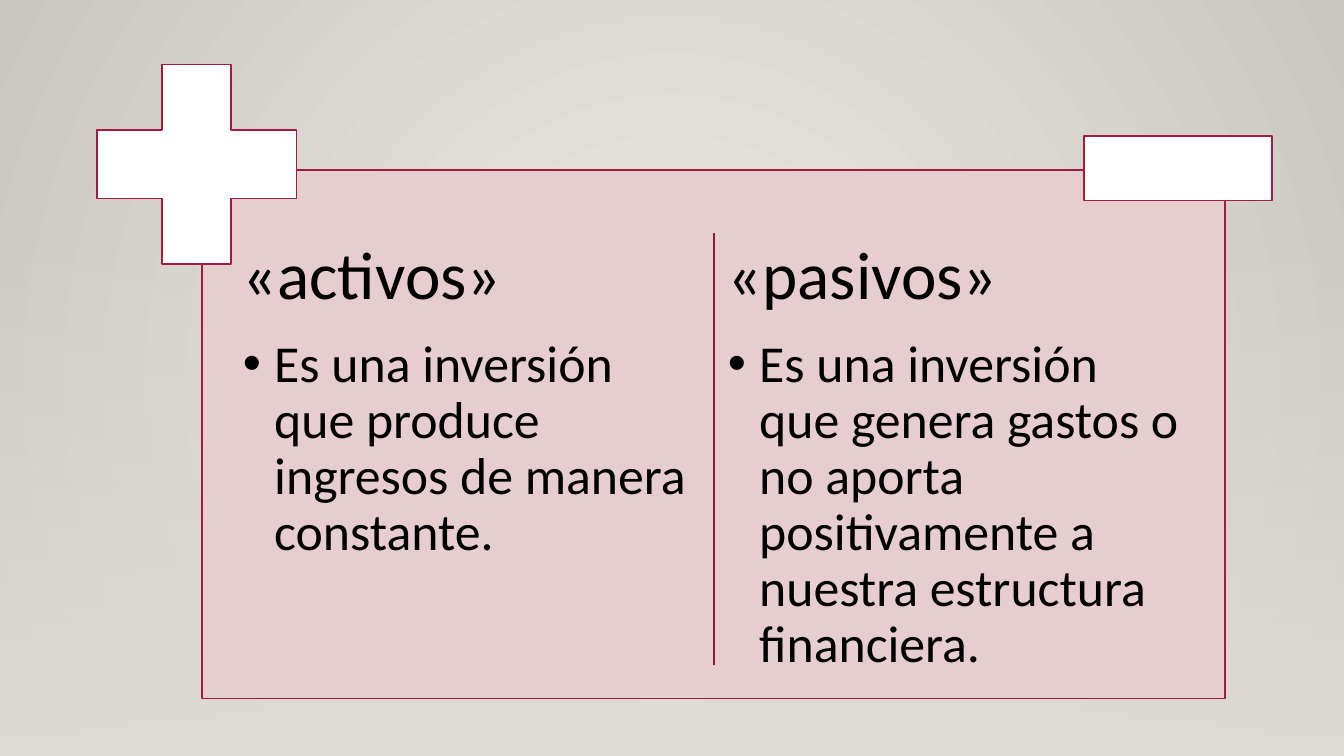
from dataclasses import dataclass

from lxml import etree
from pptx import Presentation
from pptx.dml.color import RGBColor
from pptx.enum import shapes, text
from pptx.oxml import ns
from pptx.util import Inches, Pt


@dataclass
class Theme:
    font: str = "Calibri"
    head: int = 48
    body: int = 37
    ink: str = "000000"
    white: str = "FFFFFF"
    panel: str = "E6CDCF"
    edge: str = "A61B3C"
    rule: str = "931835"
    glow: str = "ECEAE7"
    rim: str = "CAC7C1"
    floor: str = "DFDBD5"
    width: float = 1.25


SIZE = (13.33, 7.5)
FLOOR = (0, 2.21, 13.33, 5.29)
PANEL = (2, 1.69, 10.15, 5.24)
PLUS = (0.96, 0.64, 1.98, 1.98)
MINUS = (10.75, 1.35, 1.87, 0.64)
RULE = (7.08, 2.31, 7.08, 6.6)
LEFT, STEP, TOP, WIDE, HIGH = 2.31, 4.81, 2.3, 4.71, 4.49
INSET, HANG = 0.1, 0.31
COLUMNS = [
    ("«activos»", "Es una inversión que produce ingresos de manera constante."),
    ("«pasivos»", "Es una inversión que genera gastos o no aporta "
                  "positivamente a nuestra estructura financiera."),
]

theme = Theme()


def rgb(code):
    return RGBColor.from_string(code)


def inches(nums):
    return [Inches(n) for n in nums]


def add(parent, tag, **attrs):
    node = etree.SubElement(parent, ns.qn(tag))
    for key, val in attrs.items():
        node.set(key, str(val))
    return node


def blend(fill, first, last):
    fill.gradient()
    for stop, code, at in zip(fill.gradient_stops, (first, last), (0, 1)):
        stop.color.rgb = rgb(code)
        stop.position = at


def block(slide, kind, box, fill=None):
    shape = slide.shapes.add_shape(kind, *inches(box))
    shape.shadow.inherit = False
    if fill:
        shape.fill.solid()
        shape.fill.fore_color.rgb = rgb(fill)
        shape.line.color.rgb = rgb(theme.edge)
        shape.line.width = Pt(theme.width)
    else:
        shape.line.fill.background()
    return shape


def backdrop(slide):
    blend(slide.background.fill, theme.glow, theme.rim)
    grad = next(slide.background._cSld.iter(ns.qn("a:gradFill")))
    grad.remove(grad.find(ns.qn("a:lin")))
    ring = add(grad, "a:path", path="circle")
    add(ring, "a:fillToRect", l=50000, t=50000, r=50000, b=50000)
    floor = block(slide, shapes.MSO_SHAPE.RECTANGLE, FLOOR)
    blend(floor.fill, theme.floor, theme.floor)
    floor.fill.gradient_angle = 270
    clear = next(floor._element.iter(ns.qn("a:srgbClr")))
    add(clear, "a:alpha", val=0)


def write(para, words, size, after, bullet=None):
    para.text = words
    para.level = 1 if bullet else 0
    para.alignment = text.PP_ALIGN.LEFT
    para.line_spacing = 0.9
    para.space_before = Pt(0)
    props = para._p.get_or_add_pPr()
    hang = Inches(HANG) if bullet else 0
    props.set("marL", str(hang))
    props.set("indent", str(-hang))
    add(add(props, "a:spcAft"), "a:spcPct", val=after * 1000)
    if bullet:
        add(props, "a:buChar", char=bullet)
    else:
        add(props, "a:buNone")
    para.font.size = Pt(size)
    para.font.name = theme.font
    para.font.color.rgb = rgb(theme.ink)


def column(slide, num, head, body):
    hold = slide.placeholders[num + 1]
    slide.shapes._spTree.append(hold._element)
    box = inches((LEFT + num * STEP, TOP, WIDE, HIGH))
    hold.left, hold.top, hold.width, hold.height = box
    frame = hold.text_frame
    frame.word_wrap = True
    frame.auto_size = text.MSO_AUTO_SIZE.NONE
    frame.vertical_anchor = text.MSO_ANCHOR.TOP
    frame.margin_left = frame.margin_right = Inches(INSET)
    frame.margin_top = frame.margin_bottom = Inches(INSET)
    write(frame.paragraphs[0], head, theme.head, 35)
    write(frame.add_paragraph(), body, theme.body, 15, "•")


def main():
    deck = Presentation()
    deck.slide_width, deck.slide_height = inches(SIZE)
    slide = deck.slides.add_slide(deck.slide_layouts[3])
    title = slide.shapes.title._element
    title.getparent().remove(title)
    backdrop(slide)
    block(slide, shapes.MSO_SHAPE.RECTANGLE, PANEL, theme.panel)
    for num, words in enumerate(COLUMNS):
        column(slide, num, *words)
    plus = block(slide, shapes.MSO_SHAPE.CROSS, PLUS, theme.white)
    plus.adjustments[0] = 0.328
    block(slide, shapes.MSO_SHAPE.RECTANGLE, MINUS, theme.white)
    rule = slide.shapes.add_connector(shapes.MSO_CONNECTOR.STRAIGHT, *inches(RULE))
    rule.line.color.rgb = rgb(theme.rule)
    rule.line.width = Pt(theme.width)
    add(rule._element.spPr, "a:effectLst")
    deck.save("out.pptx")


if __name__ == "__main__":
    main()
